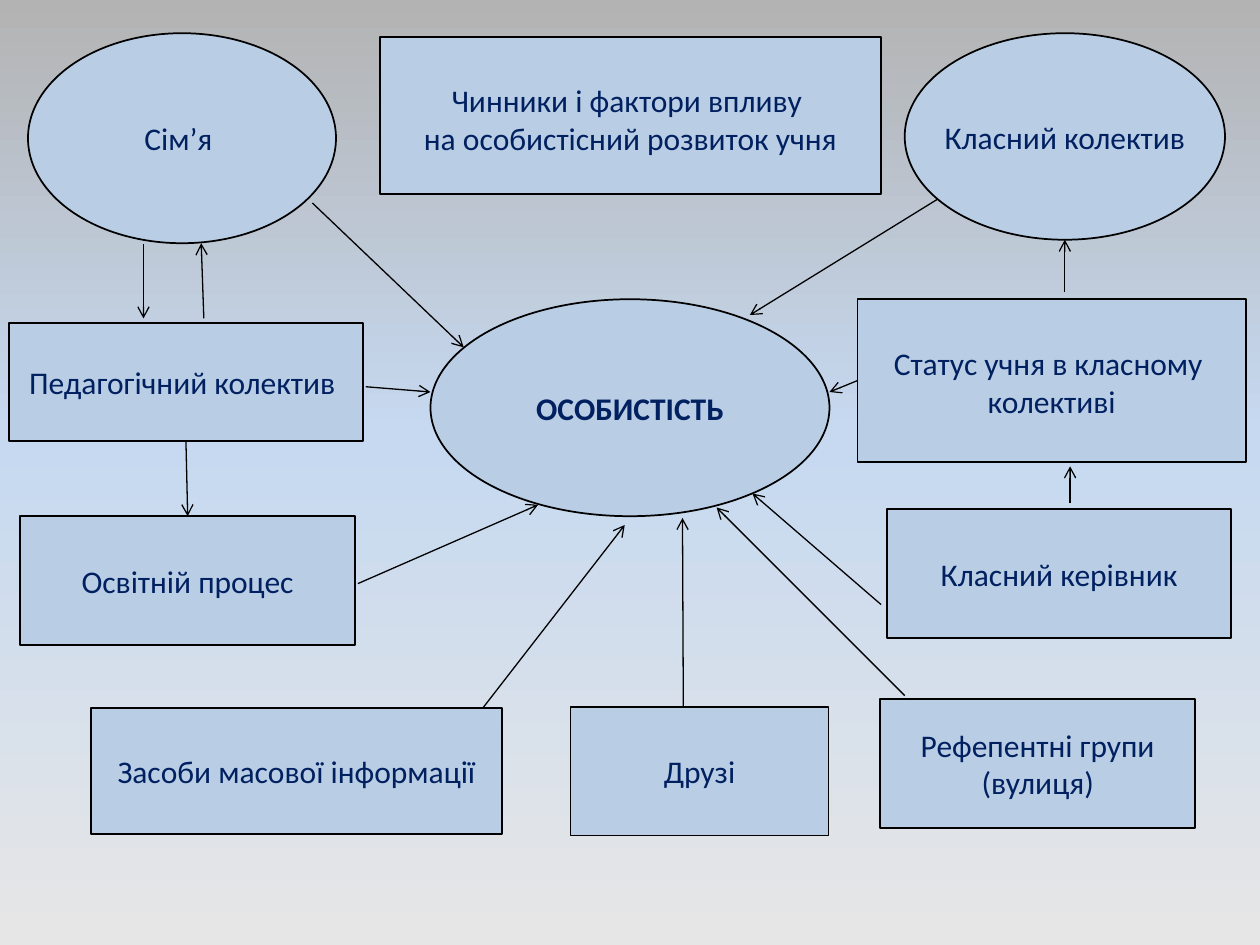
import copy
import pptx
import pptx.util
import pptx.dml.color
import pptx.enum.shapes
import pptx.enum.text
import pptx.oxml
import pptx.oxml.ns
import lxml.etree

Pt = pptx.util.Pt
RGB = pptx.dml.color.RGBColor
qn = pptx.oxml.ns.qn
KIND = pptx.enum.shapes.MSO_SHAPE
MID = pptx.enum.text.MSO_ANCHOR.MIDDLE
TOP = pptx.enum.text.MSO_ANCHOR.TOP

FILL = RGB(0xB9, 0xCD, 0xE5)
INK = RGB(0x00, 0x20, 0x60)
EDGE = RGB(0x00, 0x00, 0x00)
STOPS = [
    (0, RGB(0xB3, 0xB3, 0xB3)),
    (0.46, RGB(0xC6, 0xD9, 0xF1)),
    (1, RGB(0xE6, 0xE6, 0xE6)),
]
FRAME = {
    "word_wrap": False,
    "auto_size": pptx.enum.text.MSO_AUTO_SIZE.NONE,
    "margin_left": Pt(7.2),
    "margin_right": Pt(7.2),
    "margin_bottom": Pt(3.6),
}
FONT = {"name": "Calibri", "size": Pt(18)}


def apply(item, form):
    for key, value in form.items():
        setattr(item, key, value)


def dress(shape, text, bold=False, low=False):
    shape.shadow.inherit = False
    shape.fill.solid()
    shape.fill.fore_color.rgb = FILL
    shape.line.color.rgb = EDGE
    shape.line.width = Pt(1)
    frame = shape.text_frame
    frame.text = text
    apply(frame, FRAME)
    frame.vertical_anchor = TOP if low else MID
    frame.margin_top = Pt(25.5 if low else 3.6)
    for para in frame.paragraphs:
        para.alignment = pptx.enum.text.PP_ALIGN.CENTER
        for run in para.runs:
            apply(run.font, {**FONT, "bold": bold})
            run.font.color.rgb = INK
    return shape


def node(slide, box, kind, rect, text, **style):
    x, y, wide, high = rect
    shape = slide.shapes.add_shape(
        kind, Pt(box[0] + x), Pt(box[1] + y), Pt(wide), Pt(high))
    return dress(shape, text, **style)


def arrow(slide, box, start, end, tail=None, head=None):
    ends = [Pt(box[i] + spot[i]) for spot in (start, end) for i in (0, 1)]
    line = slide.shapes.add_connector(
        pptx.enum.shapes.MSO_CONNECTOR.STRAIGHT, *ends)
    line.line.color.rgb = EDGE
    line.line.width = Pt(0.75)
    if tail:
        line.begin_connect(*tail)
    if head:
        line.end_connect(*head)
    props = line.element.spPr
    lxml.etree.SubElement(props.find(qn("a:ln")), qn("a:tailEnd"), type="arrow")
    lxml.etree.SubElement(props, qn("a:effectLst"))


def paint(slide):
    fill = slide.background.fill
    fill.gradient()
    fill.gradient_angle = 270
    stops = slide.element.find(".//" + qn("a:gsLst"))
    stops.append(copy.deepcopy(stops[0]))
    for stop, (place, tone) in zip(fill.gradient_stops, STOPS):
        stop.position = place
        stop.color.rgb = tone


def title(slide, box):
    shape = slide.shapes.title
    sides = ("left", "top", "width", "height")
    apply(shape, {side: Pt(size) for side, size in zip(sides, box)})
    dress(shape, "Чинники і фактори впливу \nна особистісний розвиток учня",
          low=True)


def core(slide, box):
    node(slide, box, KIND.OVAL, (0, 0, box[2], box[3]), "ОСОБИСТІСТЬ", bold=True)


def left(slide, box):
    node(slide, box, KIND.OVAL, (11, 0, 176, 120), "Сім’я ")
    staff = node(slide, box, KIND.RECTANGLE, (0, 165.5, box[2], 67.5),
                 "Педагогічний колектив ")
    study = node(slide, box, KIND.RECTANGLE, (6.5, 276, 191.5, 73.5),
                 "Освітній процес")
    arrow(slide, box, (77, 120.5), (77, 163))
    arrow(slide, box, (111.5, 163), (110, 120))
    arrow(slide, box, (101, 233), (102, 276), (staff, 2), (study, 0))


def right(slide, box):
    node(slide, box, KIND.OVAL, (27, 0, 183, 118), "Класний колектив")
    rank = node(slide, box, KIND.RECTANGLE, (0, 152, box[2], 93),
                "Статус учня в класному \nколективі", low=True)
    node(slide, box, KIND.RECTANGLE, (17, 272, 196.5, 73.5), "Класний керівник")
    arrow(slide, box, (121.5, 268.5), (121.5, 247.5))
    arrow(slide, box, (118.5, 148), (118.5, 118))
    return rank


def base(slide, box):
    for rect, text in (
        ((0, 5, 235, 72), "Засоби масової інформації"),
        ((274, 4.5, 147.5, 73.5), "Друзі"),
        ((451, 0, 180, 73.5), "Рефепентні групи\n(вулиця)"),
    ):
        node(slide, box, KIND.RECTANGLE, rect, text)


def links(slide, box, rank):
    for start, end in (
        ((-41.5, 162.5), (61.5, 117.5)),
        ((-67.5, -55), (19, 27.5)),
        ((30, 233.5), (111, 129)),
        ((257.5, 174.5), (184, 111)),
        ((289.5, -57), (182.5, 9)),
        ((144.5, 233), (144, 125)),
        ((271, 226.5), (163.5, 119)),
        ((-37, 50), (0, 53)),
    ):
        arrow(slide, box, start, end)
    arrow(slide, box, (244, 46.5), (228, 53), (rank, 1))


def main():
    deck = pptx.Presentation()
    deck.slide_width, deck.slide_height = Pt(720), Pt(540)
    slide = deck.slides.add_slide(deck.slide_layouts[5])
    paint(slide)
    title(slide, (217, 21, 286.5, 90))
    heart = (246, 171, 228, 124)
    core(slide, heart)
    left(slide, (5, 19, 202.5, 349.5))
    rank = right(slide, (490, 19, 222, 345.5))
    base(slide, (52, 399.5, 631, 78))
    links(slide, heart, rank)
    deck.save("out.pptx")


if __name__ == "__main__":
    main()
